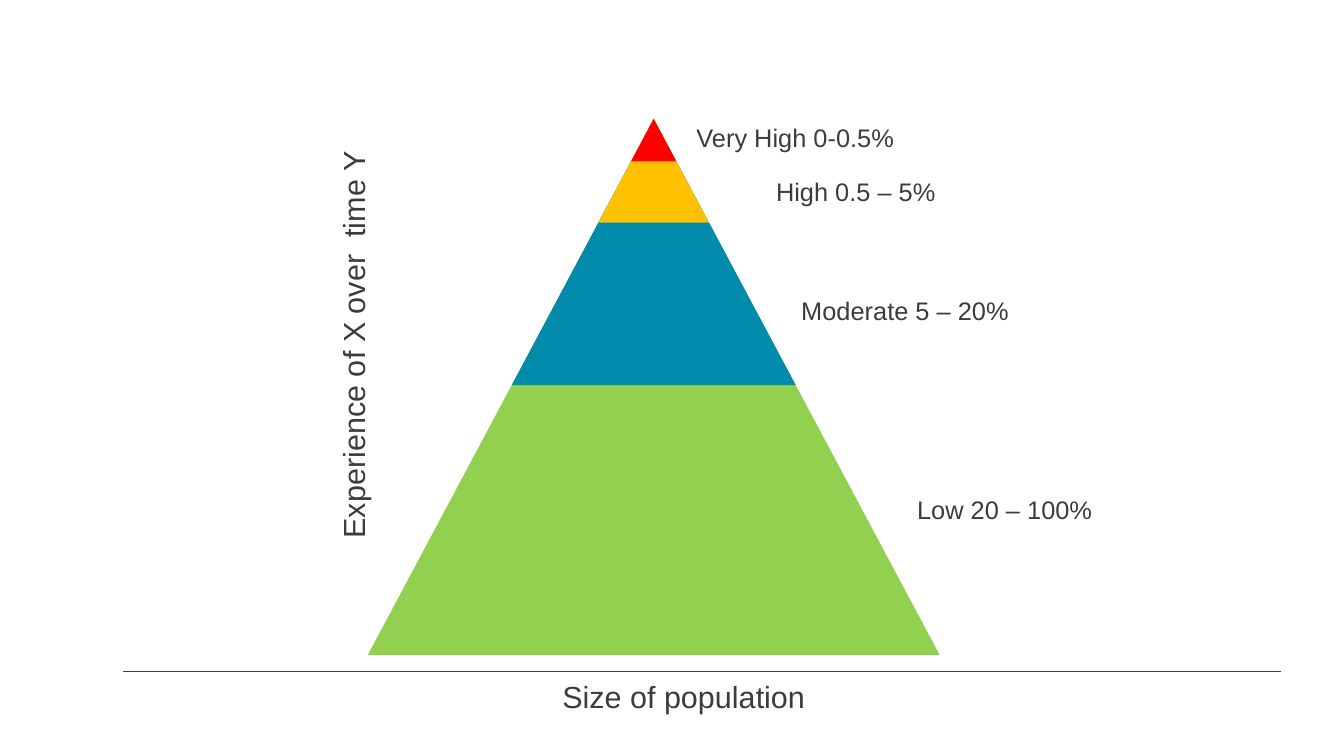
from lxml import etree
from pptx import Presentation
from pptx.dml.color import RGBColor
from pptx.enum.shapes import MSO_CONNECTOR, MSO_SHAPE
from pptx.enum.text import MSO_AUTO_SIZE
from pptx.oxml.ns import qn
from pptx.util import Inches, Pt

TRIANGLE = MSO_SHAPE.ISOSCELES_TRIANGLE
STRAIGHT = MSO_CONNECTOR.STRAIGHT
GROW = MSO_AUTO_SIZE.SHAPE_TO_FIT_TEXT

SLIDE_W, SLIDE_H = Inches(13.33), Inches(7.5)
FONT = "Arial"
COLORS = {
    "ink": "3C3C3B",
    "low": "92D050",
    "moderate": "008AAB",
    "high": "FFC000",
    "very_high": "FF0000",
}

# All lengths below are percentages of the slide's width or height
APEX_X, APEX_Y = 48.64, 15.73
WIDTH_PER_HEIGHT = 0.6
LABEL_SIZE, AXIS_SIZE = 18.1, 21.8
LABEL_H, AXIS_H = 5.47, 6.27

# Tier colour and depth below the shared apex, widest first
TIERS = [("low", 70.93), ("moderate", 35.2), ("high", 13.73), ("very_high", 5.6)]

# Text, left, top, width
LABELS = [
    ("Very High 0-0.5%", 51.08, 15.47, 19.58),
    ("High 0.5 – 5%", 57, 22.67, 13.5),
    ("Moderate 5 – 20%", 58.88, 38.4, 17.1),
    ("Low 20 – 100%", 67.5, 64.67, 14.7),
]


def px(share):
    return round(SLIDE_W * share / 100)


def py(share):
    return round(SLIDE_H * share / 100)


def color(name):
    return RGBColor.from_string(COLORS[name])


def add_tier(slide, name, depth):
    width = depth * WIDTH_PER_HEIGHT
    sp = slide.shapes.add_shape(
        TRIANGLE, px(APEX_X - width / 2), py(APEX_Y), px(width), py(depth))
    sp.shadow.inherit = False
    sp.fill.solid()
    sp.fill.fore_color.rgb = color(name)
    sp.line.fill.background()


def add_text(slide, text, left, top, width, height, size, rotation=0):
    sp = slide.shapes.add_textbox(px(left), py(top), px(width), py(height))
    sp.rotation = rotation
    tf = sp.text_frame
    tf.word_wrap = True
    tf.auto_size = GROW
    tf.text = text
    font = tf.paragraphs[0].runs[0].font
    font.name = FONT
    font.size = Pt(size)
    font.color.rgb = color("ink")


def add_rule(slide, left, right, y):
    line = slide.shapes.add_connector(STRAIGHT, px(left), py(y), px(right), py(y))
    line.line.color.rgb = color("ink")
    line.line.width = Pt(0.5)
    etree.SubElement(line._element.spPr, qn("a:effectLst"))


def main():
    prs = Presentation()
    prs.slide_width, prs.slide_height = SLIDE_W, SLIDE_H
    slide = prs.slides.add_slide(prs.slide_layouts[6])

    # Base line
    add_rule(slide, 9.15, 95.33, 88.8)

    # Pyramid
    for name, depth in TIERS:
        add_tier(slide, name, depth)

    # Tier labels
    for text, left, top, width in LABELS:
        add_text(slide, text, left, top, width, LABEL_H, LABEL_SIZE)

    # Axis titles
    add_text(slide, "Experience of X over  time Y", 10.43, 41.2, 31.73, AXIS_H,
             AXIS_SIZE, rotation=270)
    add_text(slide, "Size of population", 41.1, 89.07, 19.73, AXIS_H, AXIS_SIZE)

    prs.save("out.pptx")


if __name__ == "__main__":
    main()
